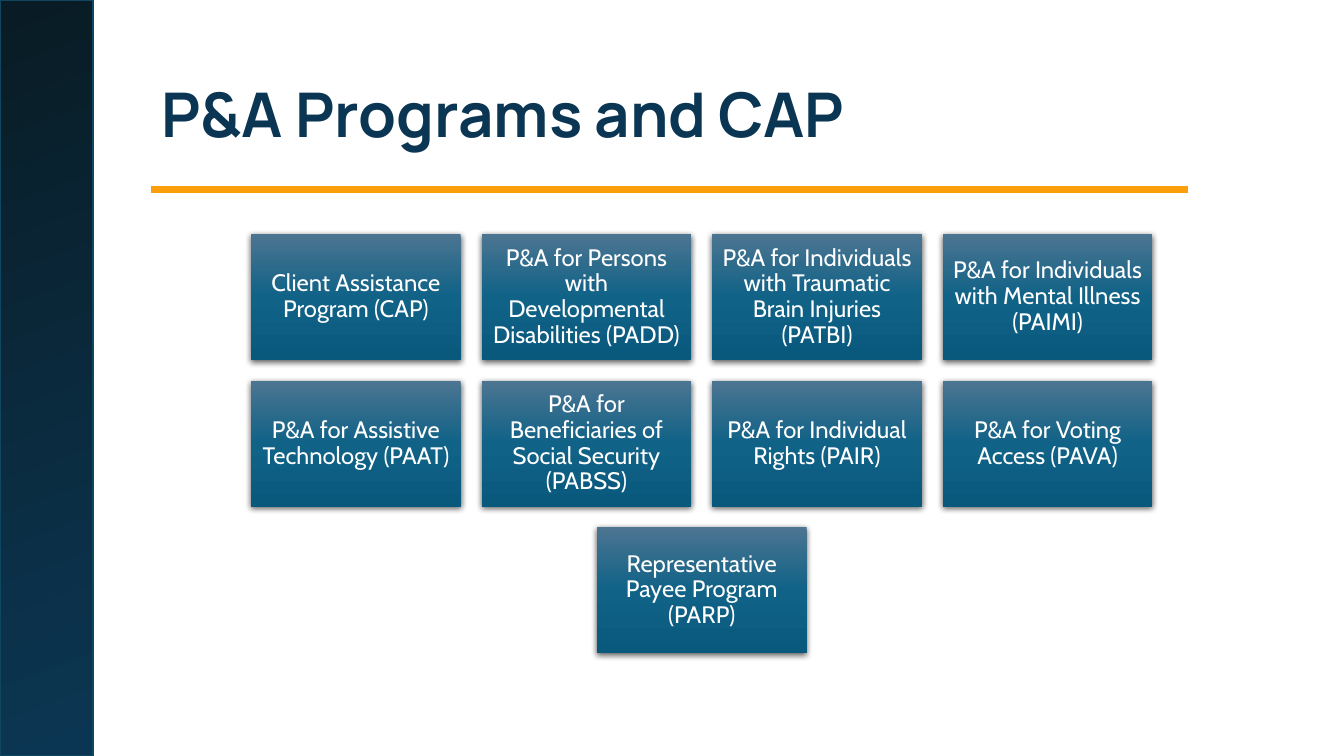
from lxml.etree import SubElement
from pptx import Presentation
from pptx.dml.color import RGBColor
from pptx.enum.shapes import MSO_CONNECTOR, MSO_SHAPE
from pptx.enum.text import MSO_ANCHOR, PP_ALIGN
from pptx.oxml.ns import qn
from pptx.util import Pt

PX = 9144
COLORS = {"navy": "0B3653", "night": "091C25", "edge": "104760", "amber": "FC9F0C",
          "steel": "4C7591", "ocean": "106287", "deep": "09597D",
          "white": "FFFFFF", "black": "000000"}
TITLE_FONT = {"name": "Manrope", "size": Pt(44), "bold": True}
CARD_FONT = {"name": "Cabin", "size": Pt(17), "bold": False}
CARD_FRAME = {"margin_left": 7 * PX, "margin_right": 7 * PX,
              "margin_top": 7 * PX, "margin_bottom": 7 * PX}
PROGRAM_ROWS = [
    ["Client Assistance Program (CAP)",
     "P&A for Persons with Developmental Disabilities (PADD)",
     "P&A for Individuals with Traumatic Brain Injuries (PATBI)",
     "P&A for Individuals with Mental Illness (PAIMI)"],
    ["P&A for Assistive Technology (PAAT)",
     "P&A for Beneficiaries of Social Security (PABSS)",
     "P&A for Individual Rights (PAIR)",
     "P&A for Voting Access (PAVA)"],
    ["Representative Payee Program (PARP)"],
]


def emu(*lengths):
    """Turn px lengths into EMU."""
    return [round(length * PX) for length in lengths]


def rgb(color):
    """Look up a named colour."""
    return RGBColor.from_string(COLORS[color])


def apply(target, values):
    """Set each attribute in values on target."""
    for name, value in values.items():
        setattr(target, name, value)


def fill_gradient(shape, stops, angle):
    """Fill a shape with (percent, colour) stops along a clockwise angle."""
    shape.fill.gradient()
    shape.fill.gradient_angle = 360 - angle
    stop_list = shape._element.spPr.find(qn("a:gradFill")).find(qn("a:gsLst"))
    for old_stop in list(stop_list):
        stop_list.remove(old_stop)
    for percent, color in stops:
        stop = SubElement(stop_list, qn("a:gs"), pos=str(percent * 1000))
        SubElement(stop, qn("a:srgbClr"), val=COLORS[color])


def drop_shadow(shape):
    """Give a shape a soft shadow straight below it."""
    shape.shadow.inherit = False
    effects = shape._element.spPr.find(qn("a:effectLst"))
    shadow = SubElement(effects, qn("a:outerShdw"), blurRad=str(Pt(4.5)),
                        dist=str(Pt(1.5)), dir="5400000", rotWithShape="0")
    black = SubElement(shadow, qn("a:srgbClr"), val=COLORS["black"])
    SubElement(black, qn("a:alpha"), val="63000")


def write_text(shape, text, font, color, align):
    """Write one vertically centred paragraph into a shape."""
    frame = shape.text_frame
    apply(frame, {"word_wrap": True, "vertical_anchor": MSO_ANCHOR.MIDDLE, "text": text})
    paragraph = frame.paragraphs[0]
    apply(paragraph, {"alignment": align, "line_spacing": 0.9})
    run_font = paragraph.runs[0].font
    apply(run_font, font)
    run_font.color.rgb = rgb(color)


def add_side_band(slide, left, top, width, height):
    """Draw the dark band down the slide edge."""
    band = slide.shapes.add_shape(MSO_SHAPE.RECTANGLE, *emu(left, top, width, height))
    band.shadow.inherit = False
    fill_gradient(band, [(0, "night"), (100, "navy")], 70)
    band.line.color.rgb = rgb("edge")
    band.line.width = Pt(1.5)


def add_heading(slide, left, top, width, height):
    """Place the title and the amber rule under it."""
    title = slide.shapes.add_textbox(*emu(left, top, width, height))
    write_text(title, "P&A Programs and CAP", TITLE_FONT, "navy", PP_ALIGN.LEFT)
    rule_y = top + height - 1
    rule = slide.shapes.add_connector(
        MSO_CONNECTOR.STRAIGHT, *emu(left, rule_y, left + 1028, rule_y))
    rule.line.color.rgb = rgb("amber")
    rule.line.width = Pt(5)
    SubElement(rule._element.spPr, qn("a:effectLst"))


def add_card(slide, program, left, top, width, height):
    """Draw one program card."""
    card = slide.shapes.add_shape(MSO_SHAPE.RECTANGLE, *emu(left, top, width, height))
    fill_gradient(card, [(0, "steel"), (50, "ocean"), (100, "deep")], 90)
    card.line.fill.background()
    drop_shadow(card)
    apply(card.text_frame, CARD_FRAME)
    write_text(card, program, CARD_FONT, "white", PP_ALIGN.CENTER)


def add_program_grid(slide, left, top, width, height):
    """Lay out the cards in rows, each centred in the box."""
    card_width, card_height = 208, 125
    columns = max(map(len, PROGRAM_ROWS))
    pitch_x = (width - card_width) / (columns - 1)
    pitch_y = (height - card_height) / (len(PROGRAM_ROWS) - 1)
    for row, programs in enumerate(PROGRAM_ROWS):
        row_left = left + (columns - len(programs)) * pitch_x / 2
        for column, program in enumerate(programs):
            add_card(slide, program, row_left + column * pitch_x,
                     top + row * pitch_y, card_width, card_height)


def main():
    """Build and save the slide."""
    deck = Presentation()
    deck.slide_width, deck.slide_height = emu(1333, 750)
    slide = deck.slides.add_slide(deck.slide_layouts[6])
    add_side_band(slide, 0, 0, 92, 750)
    add_heading(slide, 150, 44, 1092, 145)
    add_program_grid(slide, 249, 232, 894, 416)
    deck.save("out.pptx")


if __name__ == "__main__":
    main()
